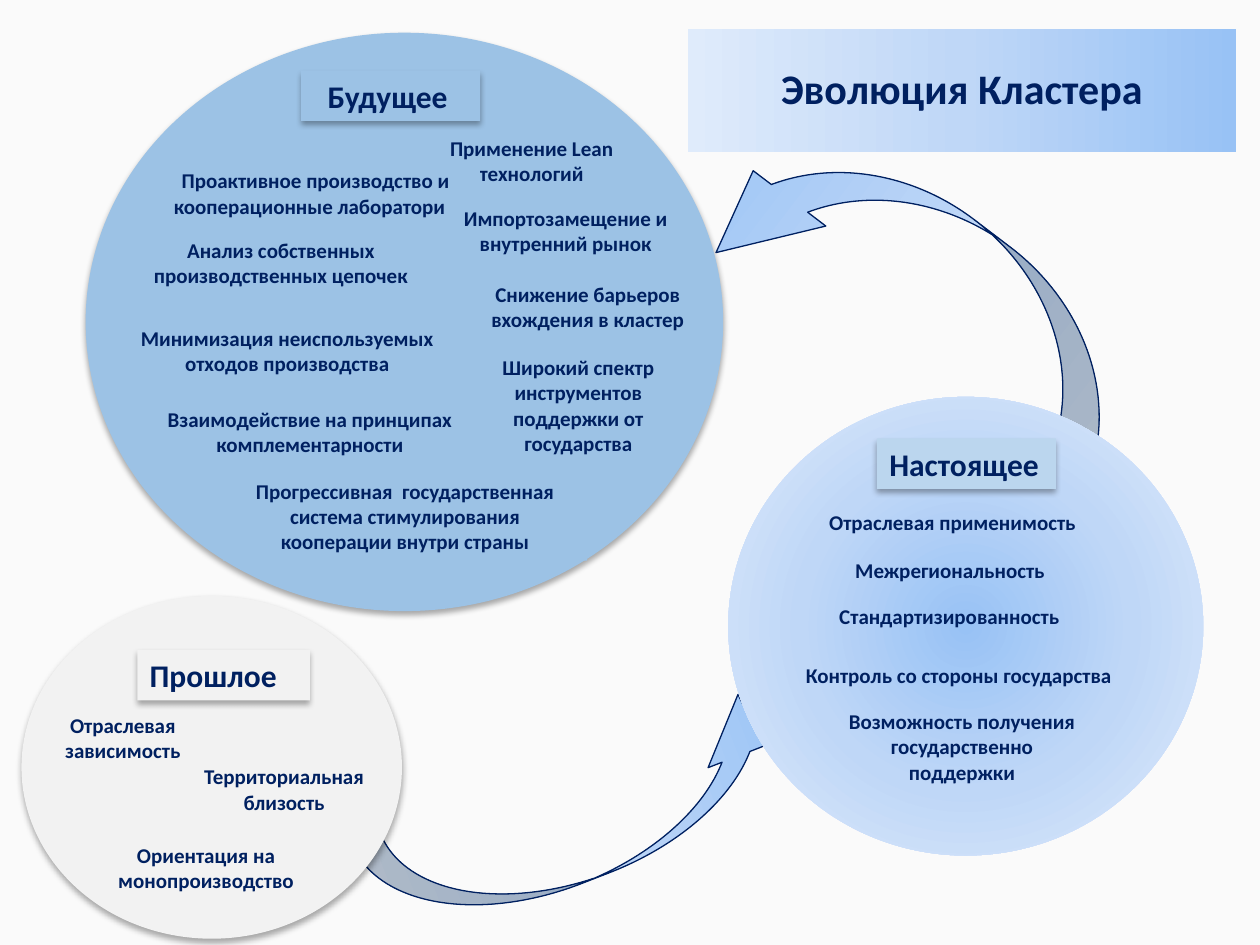
from dataclasses import dataclass

from pptx import Presentation
from pptx.dml.color import RGBColor
from pptx.enum.shapes import MSO_SHAPE
from pptx.enum.text import MSO_ANCHOR, PP_ALIGN
from pptx.oxml import parse_xml
from pptx.oxml.ns import nsdecls, qn
from pptx.util import Inches, Pt

DISC = MSO_SHAPE.FLOWCHART_CONNECTOR
ARROW = MSO_SHAPE.CURVED_UP_ARROW
MIDDLE, TOP = MSO_ANCHOR.MIDDLE, MSO_ANCHOR.TOP
CENTER, LEFT = PP_ALIGN.CENTER, PP_ALIGN.LEFT

COLORS = {
    "page": "FAFAFA",
    "ink": "002060",
    "past": "F2F2F2",
    "now": "BBD6EE",
    "next": "9CC2E5",
}
FADE = {0: "98C2F5", 50: "BFD7F7", 100: "DFEBFB"}
LINEAR = '<a:lin ang="10800000" scaled="0"/>'
RADIAL = ('<a:path path="circle"><a:fillToRect l="50000" t="50000" '
          'r="50000" b="50000"/></a:path>')
FONT = "Calibri"

# Slide grid: 100 columns by 75 rows
WIDTH, HEIGHT = Inches(10), Inches(7.5)
COL, ROW = WIDTH / 100, HEIGHT / 75


@dataclass
class Box:
    x: float
    y: float
    w: float
    h: float

    def place(self) -> tuple:
        return (round(self.x * COL), round(self.y * ROW),
                round(self.w * COL), round(self.h * ROW))


@dataclass
class Label:
    text: str
    x: float
    y: float
    w: float
    lines: int = 2

    def box(self) -> Box:
        return Box(self.x, self.y, self.w, 1 + 2.03 * self.lines)


@dataclass
class Stage:
    name: str
    disc: Box
    badge: Box
    indent: float
    color: str
    labels: list
    faded: bool = False


@dataclass
class Arrow:
    box: Box
    turn: float
    bends: tuple


ARROWS = [
    Arrow(Box(54.4, 16.5, 38.5, 14.5), 217.3, (0.25, 0.5, 0.48)),
    Arrow(Box(28.5, 60.3, 35.2, 9.5), 338.8, (0.25, 0.5, 0.48)),
]

STAGES = [
    Stage("Прошлое", Box(1.7, 47.3, 30.2, 27.2), Box(10.9, 51.6, 13.7, 4),
          1, "past", [
        Label("Территориальная близость", 14.8, 60.1, 15.5),
        Label("Ориентация на монопроизводство", 7.9, 66.3, 16.9),
        Label("Отраслевая зависимость", 2.9, 56, 13.7),
    ]),
    Stage("Настоящее", Box(57.8, 31.5, 37.7, 36.4), Box(69.6, 34.8, 14.2, 4),
          1, "now", [
        Label("Стандартизированность", 62.8, 47.4, 25.1, 1),
        Label("Контроль со стороны государства", 61.8, 52.1, 28.6, 1),
        Label("Возможность получения государственно поддержки",
              66.3, 55.7, 20.1, 3),
        Label("Межрегиональность", 66.8, 43.7, 17.2, 1),
        Label("Отраслевая применимость", 64.5, 39.9, 22.2, 1),
    ], faded=True),
    Stage("Будущее", Box(6.8, 2.6, 50.6, 45.9), Box(23.9, 5.6, 14.2, 4),
          2.1, "next", [
        Label("Широкий спектр инструментов поддержки от государства",
              38.4, 27.6, 15, 4),
        Label("Снижение барьеров вхождения в кластер", 36.4, 21.8, 20.5),
        Label("Применение Lean технологий", 34.7, 10.2, 15),
        Label("Взаимодействие на принципах комплементарности",
              11.3, 31.7, 26.6),
        Label("Анализ собственных производственных цепочек",
              10.1, 18.3, 24.4),
        Label("Проактивное производство и кооперационные лаборатории",
              12, 12.8, 26.1),
        Label("Прогрессивная  государственная система стимулирования "
              "кооперации внутри страны", 17.7, 37.4, 28.9, 3),
        Label("Минимизация неиспользуемых отходов производства",
              9.8, 25.3, 26),
        Label("Импортозамещение и внутренний рынок", 35.3, 15.8, 19.2),
    ]),
]


def rgb(name: str) -> RGBColor:
    return RGBColor.from_string(COLORS[name])


def paint(shape, name: str) -> None:
    shape.fill.solid()
    shape.fill.fore_color.rgb = rgb(name)


def fade(shape, course: str) -> None:
    stops = "".join(
        f'<a:gs pos="{at * 1000}"><a:srgbClr val="{tint}"/></a:gs>'
        for at, tint in FADE.items())
    shape.fill.background()
    props = shape._element.spPr
    props.replace(props.find(qn("a:noFill")), parse_xml(
        f'<a:gradFill {nsdecls("a")} rotWithShape="1">'
        f'<a:gsLst>{stops}</a:gsLst>{course}</a:gradFill>'))


def shade(shape) -> None:
    shape.shadow.inherit = False
    shape._element.spPr.find(qn("a:effectLst")).append(parse_xml(
        f'<a:outerShdw {nsdecls("a")} blurRad="{Pt(3.5)}" dist="{Pt(2.2)}" '
        'dir="5400000" algn="t" rotWithShape="0"><a:srgbClr val="000000">'
        '<a:alpha val="32000"/></a:srgbClr></a:outerShdw>'))


def write(shape, text: str, size: int, align=CENTER, anchor=MIDDLE) -> None:
    frame = shape.text_frame
    frame.word_wrap = True
    frame.vertical_anchor = anchor
    frame.text = text
    para = frame.paragraphs[0]
    para.alignment = align
    font = para.font
    font.name, font.size, font.bold = FONT, Pt(size), True
    font.color.rgb = rgb("ink")


def draw_arrow(slide, arrow: Arrow) -> None:
    shape = slide.shapes.add_shape(ARROW, *arrow.box.place())
    shape.rotation = arrow.turn
    for i, bend in enumerate(arrow.bends):
        shape.adjustments[i] = bend
    shape.shadow.inherit = False
    fade(shape, LINEAR)
    shape.line.color.rgb = rgb("ink")
    shape.line.width = Pt(0.75)


def draw_stage(slide, stage: Stage) -> None:
    disc = slide.shapes.add_shape(DISC, *stage.disc.place())
    disc.line.fill.background()
    if stage.faded:
        disc.shadow.inherit = False
        fade(disc, RADIAL)
    else:
        shade(disc)
        paint(disc, stage.color)

    def draw_badge() -> None:
        badge = slide.shapes.add_textbox(*stage.badge.place())
        paint(badge, stage.color)
        shade(badge)
        write(badge, stage.name, 18, LEFT, TOP)
        badge.text_frame.margin_left = round(stage.indent * COL)

    for label in stage.labels:
        note = slide.shapes.add_textbox(*label.box().place())
        if not stage.faded:
            paint(note, stage.color)
        write(note, label.text, 12)
    draw_badge()


def main() -> None:
    deck = Presentation()
    deck.slide_width, deck.slide_height = WIDTH, HEIGHT
    slide = deck.slides.add_slide(deck.slide_layouts[5])
    back = slide.background.fill
    back.solid()
    back.fore_color.rgb = rgb("page")

    # Title
    title = slide.shapes.title
    title.left, title.top, title.width, title.height = Box(
        54.6, 2.3, 43.5, 9.8).place()
    fade(title, LINEAR)
    write(title, "Эволюция Кластера", 24)
    title.text_frame.paragraphs[0].line_spacing = 0.9

    # Arrows lie under the discs
    for arrow in ARROWS:
        draw_arrow(slide, arrow)
    for stage in STAGES:
        draw_stage(slide, stage)

    deck.save("out.pptx")


if __name__ == "__main__":
    main()
